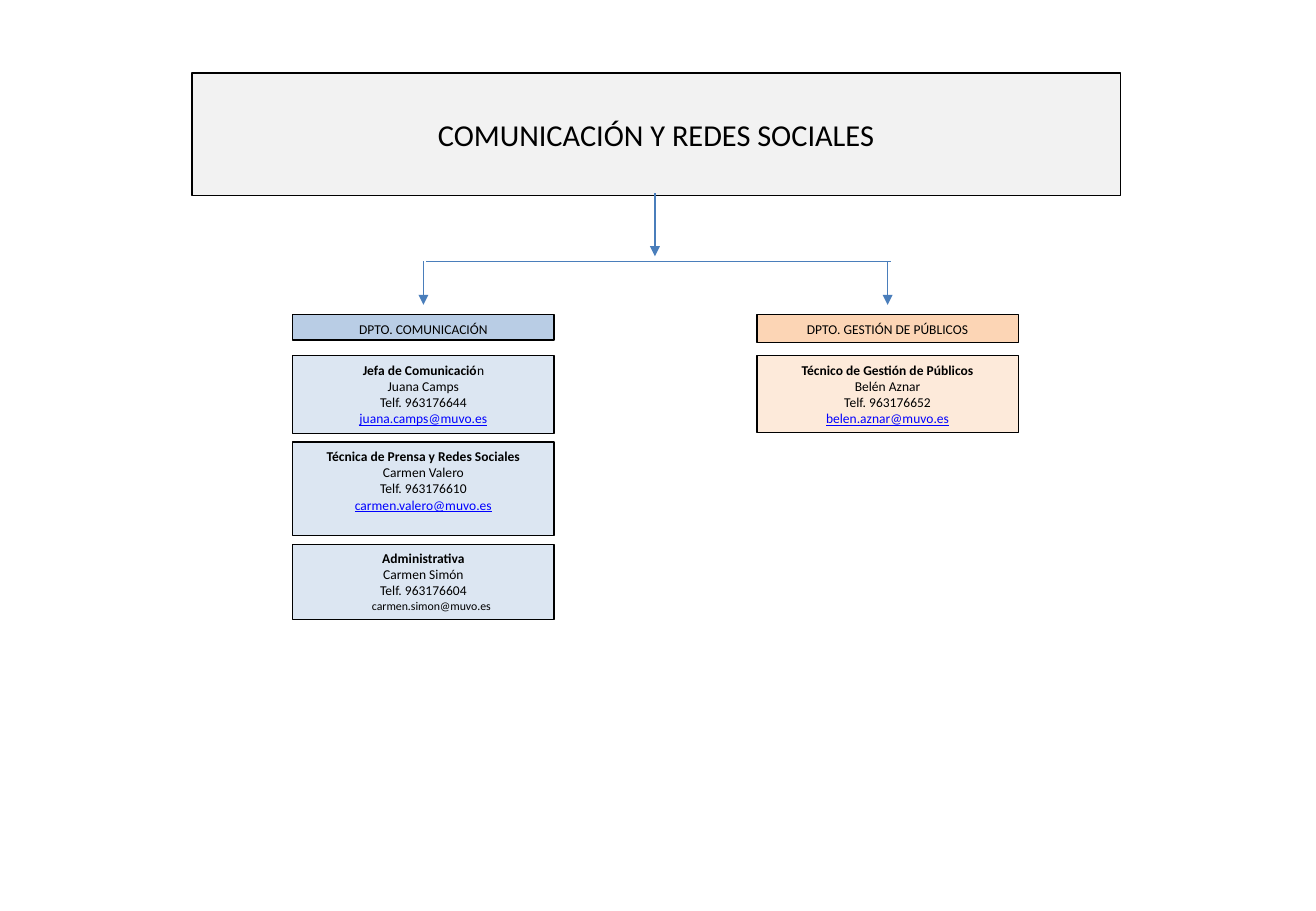
from dataclasses import dataclass

from lxml.etree import SubElement
from pptx import Presentation
from pptx.dml.color import RGBColor
from pptx.enum.shapes import MSO_CONNECTOR, MSO_SHAPE
from pptx.enum.text import MSO_ANCHOR, PP_ALIGN
from pptx.oxml.ns import qn
from pptx.shapes.autoshape import Shape
from pptx.util import Inches, Pt

# Grid: 108.3 columns by 75 rows of square cells
CELL = Inches(0.1)
COLS, ROWS = 108.3, 75
FONT = "Calibri"

BLACK = RGBColor(0x00, 0x00, 0x00)
GREY = RGBColor(0xF2, 0xF2, 0xF2)
BLUE = RGBColor(0xB9, 0xCD, 0xE5)
PALE_BLUE = RGBColor(0xDC, 0xE6, 0xF2)
PEACH = RGBColor(0xFC, 0xD5, 0xB5)
PALE_PEACH = RGBColor(0xFD, 0xEA, 0xDA)
LINK = RGBColor(0x00, 0x00, 0xFF)
ARROW = RGBColor(0x4A, 0x7E, 0xBB)


@dataclass
class Person:
    role: str
    name: str
    phone: str
    mail: str
    rows: float
    tail: str = ""  # end of the role, not bold
    linked: bool = True


@dataclass
class Unit:
    name: str
    col: float
    rows: float
    fill: RGBColor
    pale: RGBColor
    staff: list[Person]


UNITS = [
    Unit("DPTO. COMUNICACIÓN", 24.1, 2.1, BLUE, PALE_BLUE, [
        Person("Jefa de Comunicació", "Juana Camps", "963176644",
               "juana.camps@muvo.es", 6.4, tail="n"),
        Person("Técnica de Prensa y Redes Sociales", "Carmen Valero",
               "963176610", "carmen.valero@muvo.es", 7.7),
        Person("Administrativa", "Carmen Simón", "963176604",
               "carmen.simon@muvo.es", 6.2, linked=False),
    ]),
    Unit("DPTO. GESTIÓN DE PÚBLICOS", 62.3, 2.3, PEACH, PALE_PEACH, [
        Person("Técnico de Gestión de Públicos", "Belén Aznar", "963176652",
               "belen.aznar@muvo.es", 6.3),
    ]),
]
WIDTH = 21.5
UNIT_TOP, CARD_TOP, GAP = 25.9, 29.3, 0.7
BAR, DROP = 21.5, 3.6

deck = Presentation()
deck.slide_width, deck.slide_height = int(COLS * CELL), int(ROWS * CELL)
slide = deck.slides.add_slide(deck.slide_layouts[6])


def cells(*sides: float) -> list[int]:
    return [int(side * CELL) for side in sides]


def add_box(col: float, row: float, wide: float, high: float,
            fill: RGBColor, text: str, size: float = 8) -> Shape:
    box = slide.shapes.add_shape(MSO_SHAPE.RECTANGLE,
                                 *cells(col, row, wide, high))
    box.shadow.inherit = False
    box.fill.solid()
    box.fill.fore_color.rgb = fill
    box.line.color.rgb = BLACK
    box.line.width = Pt(0.75)
    frame = box.text_frame
    frame.word_wrap = True
    frame.vertical_anchor = MSO_ANCHOR.TOP
    frame.margin_left = frame.margin_right = Inches(0.09)
    frame.margin_top = frame.margin_bottom = Inches(0.05)
    frame.text = text
    for line in frame.paragraphs:
        line.alignment = PP_ALIGN.CENTER
        for run in line.runs:
            run.font.name = FONT
            run.font.size = Pt(size)
            run.font.color.rgb = BLACK
    return box


def add_card(unit: Unit, row: float, person: Person) -> None:
    text = "\n".join([person.role, person.name, f"Telf. {person.phone}",
                      person.mail])
    box = add_box(unit.col, row, WIDTH, person.rows, unit.pale, text)
    lines = box.text_frame.paragraphs
    lines[0].runs[0].font.bold = True
    if person.tail:
        run = lines[0].add_run()
        run.text = person.tail
        run.font.name, run.font.size = FONT, Pt(8)
        run.font.color.rgb = BLACK
    mail = lines[-1].runs[0].font
    if person.linked:
        mail.color.rgb = LINK
        mail.underline = True
    else:
        mail.size = Pt(7)
        lines[-1]._p.get_or_add_pPr().set("marL", str(Inches(0.13)))


def add_line(col: float, row: float, end_col: float, end_row: float,
             head: bool = True) -> None:
    link = slide.shapes.add_connector(MSO_CONNECTOR.STRAIGHT,
                                      *cells(col, row, end_col, end_row))
    link.line.color.rgb = ARROW
    link.line.width = Pt(0.75)
    if head:
        SubElement(link.line._get_or_add_ln(), qn("a:tailEnd"),
                   type="triangle")
    SubElement(link._element.spPr, qn("a:effectLst"))


# Title
title = add_box(15.8, 6, 76.4, 10.1, GREY, "COMUNICACIÓN Y REDES SOCIALES", 18)
title.text_frame.vertical_anchor = MSO_ANCHOR.MIDDLE

# Departments with their staff
for unit in UNITS:
    add_box(unit.col, UNIT_TOP, WIDTH, unit.rows, unit.fill, unit.name)
    row = CARD_TOP
    for person in unit.staff:
        add_card(unit, row, person)
        row += person.rows + GAP

# Branching arrows
add_line(35.1, BAR, 73.3, BAR, head=False)
for unit in UNITS:
    mid = unit.col + WIDTH / 2
    add_line(mid, BAR, mid, BAR + DROP)
add_line(53.9, 15.9, 53.9, 21.1)

deck.save("out.pptx")
